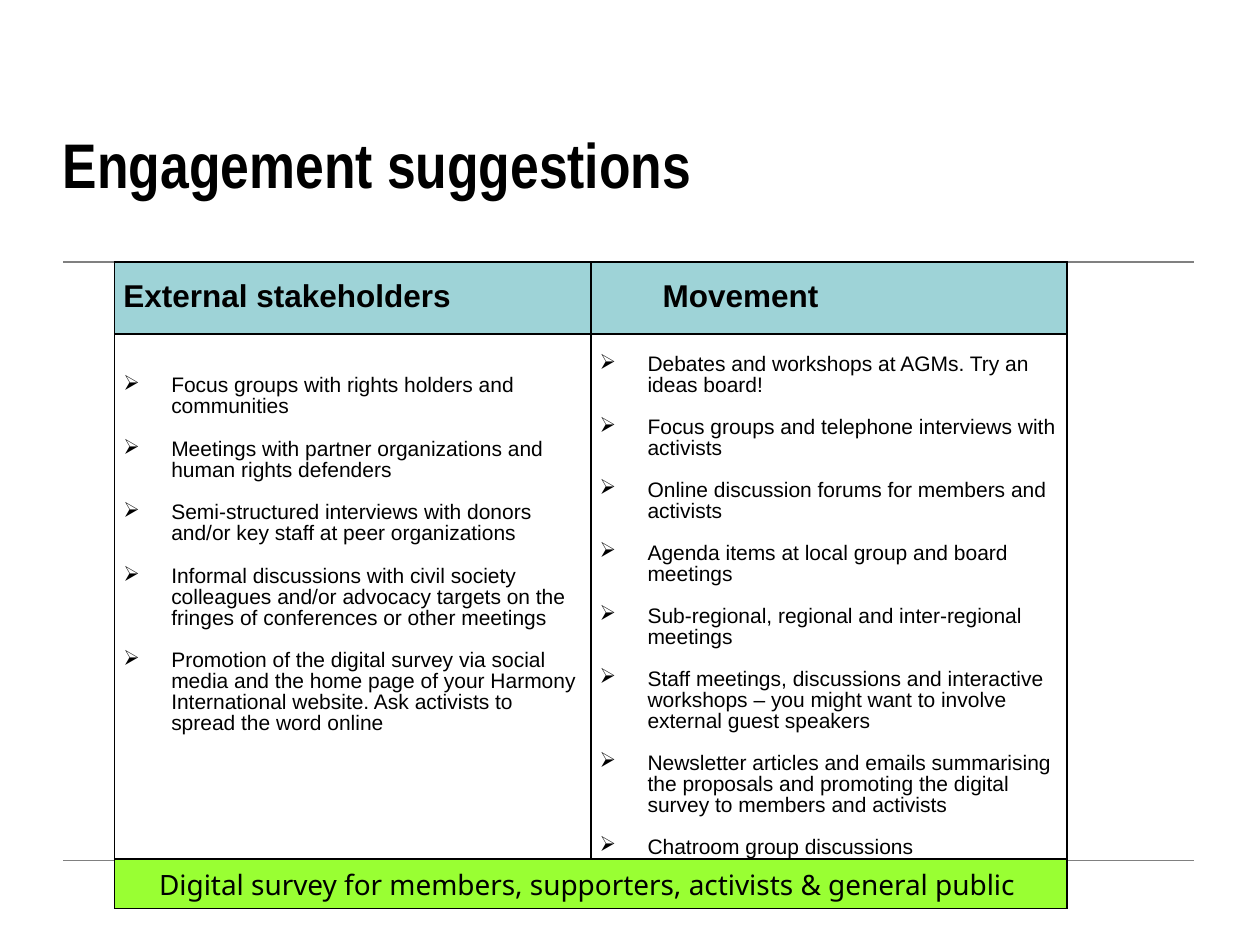
import lxml.etree
import pptx
import pptx.dml.color
import pptx.enum.text
import pptx.oxml
import pptx.oxml.ns
import pptx.util

BLACK = pptx.dml.color.RGBColor(0x00, 0x00, 0x00)
GRAY = pptx.dml.color.RGBColor(0x80, 0x80, 0x80)
TEAL = pptx.dml.color.RGBColor(0x9E, 0xD3, 0xD7)
LIME = pptx.dml.color.RGBColor(0x99, 0xFF, 0x33)

Inches, Pt = pptx.util.Inches, pptx.util.Pt
qn = pptx.oxml.ns.qn

LEFT, RIGHT = Inches(0.5), Inches(9.48)
TABLE_LEFT, TABLE_TOP = Inches(0.91), Inches(2.08)
COLUMN = Inches(3.78)
HEADER_ROW, BODY_ROW, SURVEY_ROW = Inches(0.57), Inches(4.17), Inches(0.39)
SURVEY_TOP = TABLE_TOP + HEADER_ROW + BODY_ROW
CELL_MARGIN = Inches(0.07)
BULLET_INDENT = Inches(0.38)

# heading, heading indent, space above the list, space between items, items
COLUMNS = [
    ("External stakeholders", 0, Pt(24.3), Pt(12.3), [
        "Focus groups with rights holders and communities",
        "Meetings with partner organizations and human rights defenders",
        "Semi-structured interviews with donors and/or key staff at peer organizations",
        "Informal discussions with civil society colleagues and/or advocacy targets "
        "on the fringes of conferences or other meetings",
        "Promotion of the digital survey via social media and the home page of your "
        "Harmony International website. Ask activists to spread the word online",
    ]),
    ("Movement", Inches(0.5), Pt(12), Pt(12), [
        "Debates and workshops at AGMs. Try an ideas board!",
        "Focus groups and telephone interviews with activists",
        "Online discussion forums for members and activists",
        "Agenda items at local group and board meetings",
        "Sub-regional, regional and inter-regional meetings",
        "Staff meetings, discussions and interactive workshops – you might want to "
        "involve external guest speakers",
        "Newsletter articles and emails summarising the proposals and promoting the "
        "digital survey to members and activists",
        "Chatroom group discussions",
    ]),
]


def add_bordered_table(slide, top, row_heights, column_count):
    """Add a table without a banded style, with black 1 pt lines round each cell."""
    table = slide.shapes.add_table(
        len(row_heights), column_count, TABLE_LEFT, top,
        2 * COLUMN, sum(row_heights)).table
    table.first_row = table.horz_banding = False
    for row, height in zip(table.rows, row_heights):
        row.height = height
    for cell in table.iter_cells():
        cell.fill.background()
        properties = cell._tc.get_or_add_tcPr()
        for index, side in enumerate(("lnL", "lnR", "lnT", "lnB")):
            properties.insert(index, pptx.oxml.parse_xml(
                f'<a:{side} {pptx.oxml.ns.nsdecls("a")} w="{Pt(1)}"><a:solidFill>'
                f'<a:srgbClr val="{BLACK}"/></a:solidFill></a:{side}>'))
    return table


def style_font(paragraph, name, size, bold=False):
    paragraph.font.name = name
    paragraph.font.size = Pt(size)
    paragraph.font.bold = bold
    paragraph.font.color.rgb = BLACK


presentation = pptx.Presentation()
presentation.slide_width = Inches(10)
presentation.slide_height = Inches(7.5)
slide = presentation.slides.add_slide(presentation.slide_layouts[6])

# Rules across the page
for y in (TABLE_TOP, Inches(6.83)):
    rule = slide.shapes.add_connector(
        pptx.enum.shapes.MSO_CONNECTOR.STRAIGHT, LEFT, y, RIGHT, y)
    rule.line.color.rgb = GRAY
    rule.line.width = Pt(1)
    lxml.etree.SubElement(rule._element.spPr, qn("a:effectLst"))

# Title
title = slide.shapes.add_textbox(LEFT, Inches(0.67), Inches(9), Inches(1.25)).text_frame
title.word_wrap = True
title.margin_left = 0
title.vertical_anchor = pptx.enum.text.MSO_ANCHOR.MIDDLE
title.text = "Engagement suggestions"
style_font(title.paragraphs[0], "Arial Narrow", 36, True)

# Survey bar
survey = add_bordered_table(slide, SURVEY_TOP, [SURVEY_ROW], 1).cell(0, 0)
survey.fill.solid()
survey.fill.fore_color.rgb = LIME
survey.margin_right = Inches(0.16)
survey.text = "Digital survey for members, supporters, activists & general public"
survey_line = survey.text_frame.paragraphs[0]
survey_line.alignment = pptx.enum.text.PP_ALIGN.CENTER
style_font(survey_line, "Noto Sans", 16)

# Suggestions
suggestions = add_bordered_table(slide, TABLE_TOP, [HEADER_ROW, BODY_ROW], 2)
for column, (heading, indent, space_above, gap, items) in enumerate(COLUMNS):
    header, body = (suggestions.cell(row, column) for row in range(2))
    for cell in (header, body):
        cell.margin_left = cell.margin_right = CELL_MARGIN
        cell.margin_top = cell.margin_bottom = 0

    header.fill.solid()
    header.fill.fore_color.rgb = TEAL
    header.margin_left = CELL_MARGIN + indent
    header.margin_top = Pt(18)
    header.text = heading
    heading_line = header.text_frame.paragraphs[0]
    heading_line.line_spacing = Pt(12)
    style_font(heading_line, "Arial", 18, True)

    body.margin_top = space_above
    body.text = "\n".join(items)
    for number, paragraph in enumerate(body.text_frame.paragraphs):
        properties = paragraph._p.get_or_add_pPr()
        properties.set("marL", str(BULLET_INDENT))
        properties.set("indent", str(-BULLET_INDENT))
        lxml.etree.SubElement(properties, qn("a:buChar"), char="➢")
        paragraph.line_spacing = Pt(12)
        if number:
            paragraph.space_before = gap
        style_font(paragraph, "Arial", 12)

presentation.save("out.pptx")
